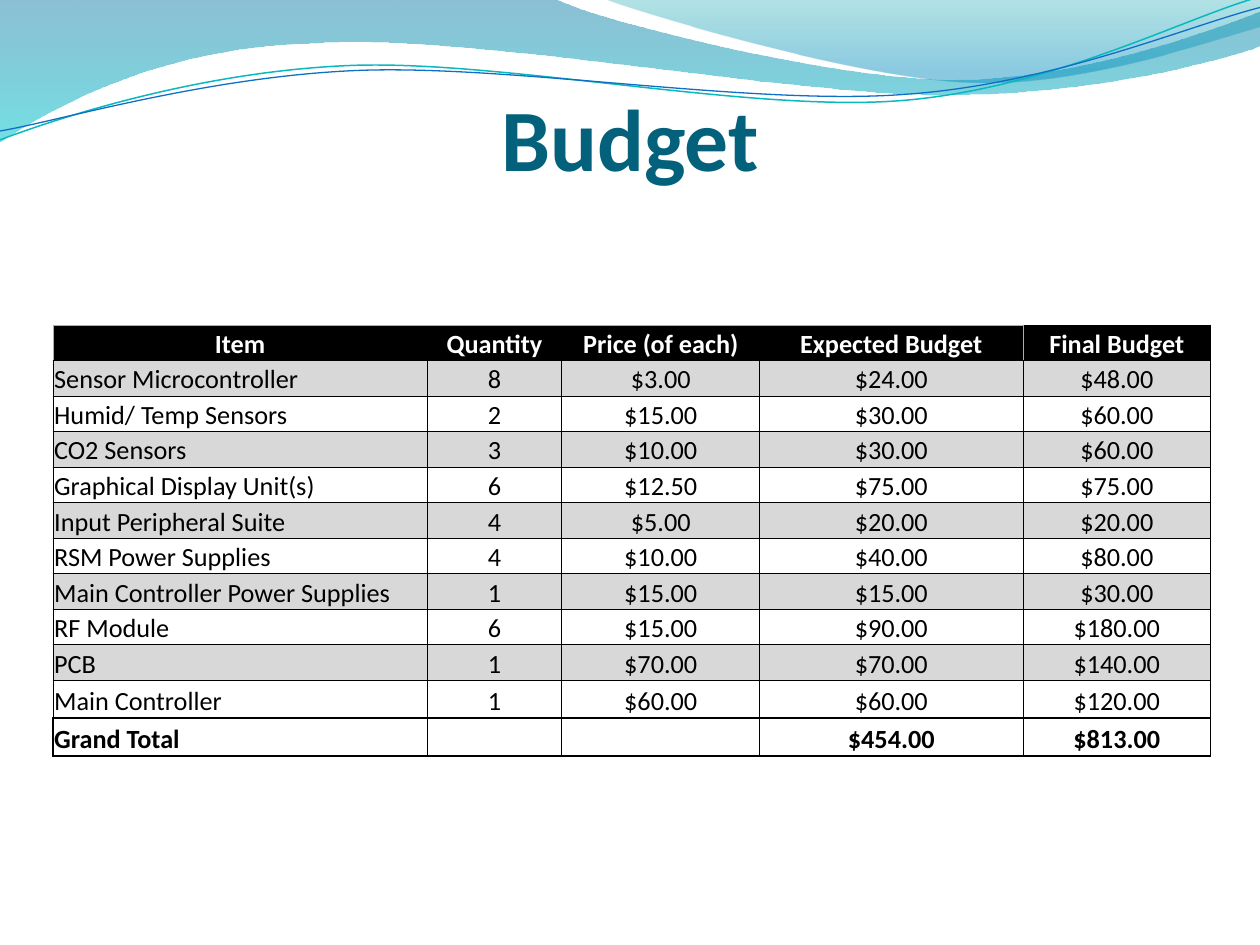
from math import cos, radians, sin

from lxml.etree import SubElement
from pptx import Presentation
from pptx.dml.color import RGBColor
from pptx.enum.text import MSO_ANCHOR as Anchor, PP_ALIGN as Align
from pptx.oxml.ns import qn
from pptx.util import Inches, Pt

FONT = "Calibri"
BLACK, WHITE, GREY, TEAL, PALE_BLUE = "000000", "FFFFFF", "D8D8D8", "04617B", "95B3D7"
STRAND_TILT = 357.3

# Each wave is a start point, then steps: two numbers for a straight line,
# six for a cubic curve (two control points and the end point).
BANDS = [
    ((0, 0), [(4.4, -0.01), (4.76, 0.17, 6.64, 0.63, 7.58, 0.63),
              (8.53, 0.63, 9.58, 0.26, 10, 0.09), (10.01, 0.36),
              (9.83, 0.44, 8.7, 0.76, 7.46, 0.75),
              (6.22, 0.75, 3.82, 0.28, 2.57, 0.34),
              (1.29, 0.36, 0.46, 0.83, -0.01, 1.13), (0, 0)],
     [(0, "0074A1", 45), (1, "00C6CF", 55)]),
    ((4.79, -0.01), [(5.09, 0.11, 6.82, 0.62, 7.69, 0.65),
                     (8.56, 0.69, 9.61, 0.32, 10, 0.21), (10, 0), (4.79, -0.01)],
     [(0, "00A1A9", 30), (0.8, "008BBF", 45)]),
]
STRANDS = [
    ((0, 1.11), [(0.48, 0.93, 1.58, 0.57, 2.77, 0.52),
                 (3.95, 0.47, 5.93, 0.89, 7.13, 0.8),
                 (8.33, 0.71, 9.38, 0.15, 9.98, -0.02)],
     (4.99, 0.57), "0AB8BF", 0.85),
    ((0, 1.04), [(0.47, 0.96, 1.64, 0.61, 2.83, 0.56),
                 (4.03, 0.51, 5.97, 0.84, 7.17, 0.75),
                 (8.36, 0.67, 9.41, 0.21, 10, 0.06)],
     (5, 0.59), "0F6FC6", 0.75),
]

COLUMN_WIDTHS = [2.97, 1.07, 1.57, 2.09, 1.49]
TOTAL_ROW_HEIGHT = 0.3
ROWS = [
    ("Item", "Quantity", "Price (of each)", "Expected Budget", "Final Budget"),
    ("Sensor Microcontroller", "8", "$3.00", "$24.00", "$48.00"),
    ("Humid/ Temp Sensors", "2", "$15.00", "$30.00", "$60.00"),
    ("CO2 Sensors", "3", "$10.00", "$30.00", "$60.00"),
    ("Graphical Display Unit(s)", "6", "$12.50", "$75.00", "$75.00"),
    ("Input Peripheral Suite", "4", "$5.00", "$20.00", "$20.00"),
    ("RSM Power Supplies", "4", "$10.00", "$40.00", "$80.00"),
    ("Main Controller Power Supplies", "1", "$15.00", "$15.00", "$30.00"),
    ("RF Module", "6", "$15.00", "$90.00", "$180.00"),
    ("PCB", "1", "$70.00", "$70.00", "$140.00"),
    ("Main Controller", "1", "$60.00", "$60.00", "$120.00"),
    ("Grand Total", "", "", "$454.00", "$813.00"),
]
LAST_ROW, LAST_COLUMN = len(ROWS) - 1, len(COLUMN_WIDTHS) - 1


def color(value):
    return RGBColor.from_string(value)


def style_font(font, size, shade, bold):
    font.name, font.size, font.bold = FONT, Pt(size), bold
    font.color.rgb = color(shade)


def turn(point, center, degrees):
    angle = radians(degrees)
    x, y = point[0] - center[0], point[1] - center[1]
    return (center[0] + x * cos(angle) - y * sin(angle),
            center[1] + x * sin(angle) + y * cos(angle))


def add_wave(page, left, top, start, steps, center=(0, 0), tilt=0):
    """Lay out all points as a polyline, then join each curve's three into one."""
    points = [start] + [step[i:i + 2] for step in steps for i in range(0, len(step), 2)]
    level = [turn(point, center, -tilt) for point in points]
    corners = [(Inches(left + x), Inches(top + y)) for x, y in level]
    builder = page.shapes.build_freeform(*corners[0])
    builder.add_line_segments(corners[1:], close=points[0] == points[-1])
    wave = builder.convert_to_shape()
    wave.shadow.inherit = False
    wave.rotation = tilt
    lines = iter(list(wave._element.spPr.iter(qn("a:lnTo"))))
    for step in steps:
        curve = next(lines)
        if len(step) == 6:
            curve.tag = qn("a:cubicBezTo")
            for _ in range(2):
                line = next(lines)
                curve.append(line[0])
                line.getparent().remove(line)
    return wave


def add_header_waves(page, left, top):
    for start, steps, stops in BANDS:
        band = add_wave(page, left, top, start, steps)
        band.line.fill.background()
        band.fill.gradient()
        band.fill.gradient_angle = 270
        for stop, (position, shade, _) in zip(band.fill.gradient_stops, stops):
            stop.position = position
            stop.color.rgb = color(shade)
        shades = band._element.spPr.iter(qn("a:srgbClr"))
        for node, (_, _, opacity) in zip(shades, stops):
            SubElement(node, qn("a:alpha"), val=str(opacity * 1000))
    for start, steps, center, shade, width in STRANDS:
        strand = add_wave(page, left, top, start, steps, center, STRAND_TILT)
        strand.fill.background()
        strand.line.color.rgb = color(shade)
        strand.line.width = Pt(width)


def place_title(page, left, top, width, height):
    title = page.shapes.title
    title.left, title.top = Inches(left), Inches(top)
    title.width, title.height = Inches(width), Inches(height)
    frame = title.text_frame
    frame.text = "Budget"
    frame.vertical_anchor = Anchor.BOTTOM
    frame.margin_left = frame.margin_right = frame.margin_bottom = 0
    frame.margin_top = Inches(0.05)
    para = frame.paragraphs[0]
    para.alignment = Align.CENTER
    style_font(para.font, 50, TEAL, True)


def set_borders(cell, borders):
    """Draw the sides given as {"L": (colour, points), ...}; hide the others."""
    for side in "LRTB":
        line = SubElement(cell._tc.get_or_add_tcPr(), qn(f"a:ln{side}"))
        if side not in borders:
            SubElement(line, qn("a:noFill"))
            continue
        shade, width = borders[side]
        line.set("w", str(Pt(width)))
        fill = SubElement(line, qn("a:solidFill"))
        SubElement(fill, qn("a:srgbClr"), val=shade)


def cell_borders(row, column):
    thin, thick, pale = (BLACK, 0.5), (BLACK, 1), (PALE_BLUE, 0.5)
    if row == 0:
        borders = {"T": thin if column == LAST_COLUMN else pale, "B": thin}
        if column in (0, LAST_COLUMN):
            borders["L"] = pale
        if column >= LAST_COLUMN - 1:
            borders["R"] = thin if column == LAST_COLUMN else pale
        return borders
    total = row == LAST_ROW
    return {"L": thick if total and column == 0 else thin,
            "R": thick if total and column == LAST_COLUMN else thin,
            "T": thick if total else thin,
            "B": thick if row >= LAST_ROW - 1 else thin}


def fill_cell(cell, row, column):
    header, total = row == 0, row == LAST_ROW
    cell.text = ROWS[row][column]
    cell.vertical_anchor = Anchor.BOTTOM
    cell.margin_left = cell.margin_right = cell.margin_top = Inches(0.01)
    cell.margin_bottom = 0
    para = cell.text_frame.paragraphs[0]
    para.alignment = Align.LEFT if column == 0 and not header else Align.CENTER
    style_font(para.font, 15, WHITE if header else BLACK, header or total)
    set_borders(cell, cell_borders(row, column))
    if header or (row % 2 and not total):
        cell.fill.solid()
        cell.fill.fore_color.rgb = color(BLACK if header else GREY)
    else:
        cell.fill.background()


def add_budget_table(page, left, top, width, height):
    frame = page.shapes.add_table(len(ROWS), len(COLUMN_WIDTHS), Inches(left),
                                  Inches(top), Inches(width), Inches(height))
    table = frame.table
    table.first_row = table.horz_banding = False
    for column, column_width in zip(table.columns, COLUMN_WIDTHS):
        column.width = Inches(column_width)
    item_height = (height - 2 * TOTAL_ROW_HEIGHT) / (len(ROWS) - 2)
    for r, row in enumerate(table.rows):
        row.height = Inches(TOTAL_ROW_HEIGHT if r >= LAST_ROW - 1 else item_height)
        for c, cell in enumerate(row.cells):
            fill_cell(cell, r, c)


def main():
    deck = Presentation()
    deck.slide_width, deck.slide_height = Inches(10), Inches(7.5)
    page = deck.slides.add_slide(deck.slide_layouts[5])
    add_header_waves(page, 0, 0)
    place_title(page, 0.5, 0.25, 9, 1.25)
    add_budget_table(page, 0.42, 2.58, 9.19, 3.42)
    deck.save("out.pptx")


if __name__ == "__main__":
    main()
